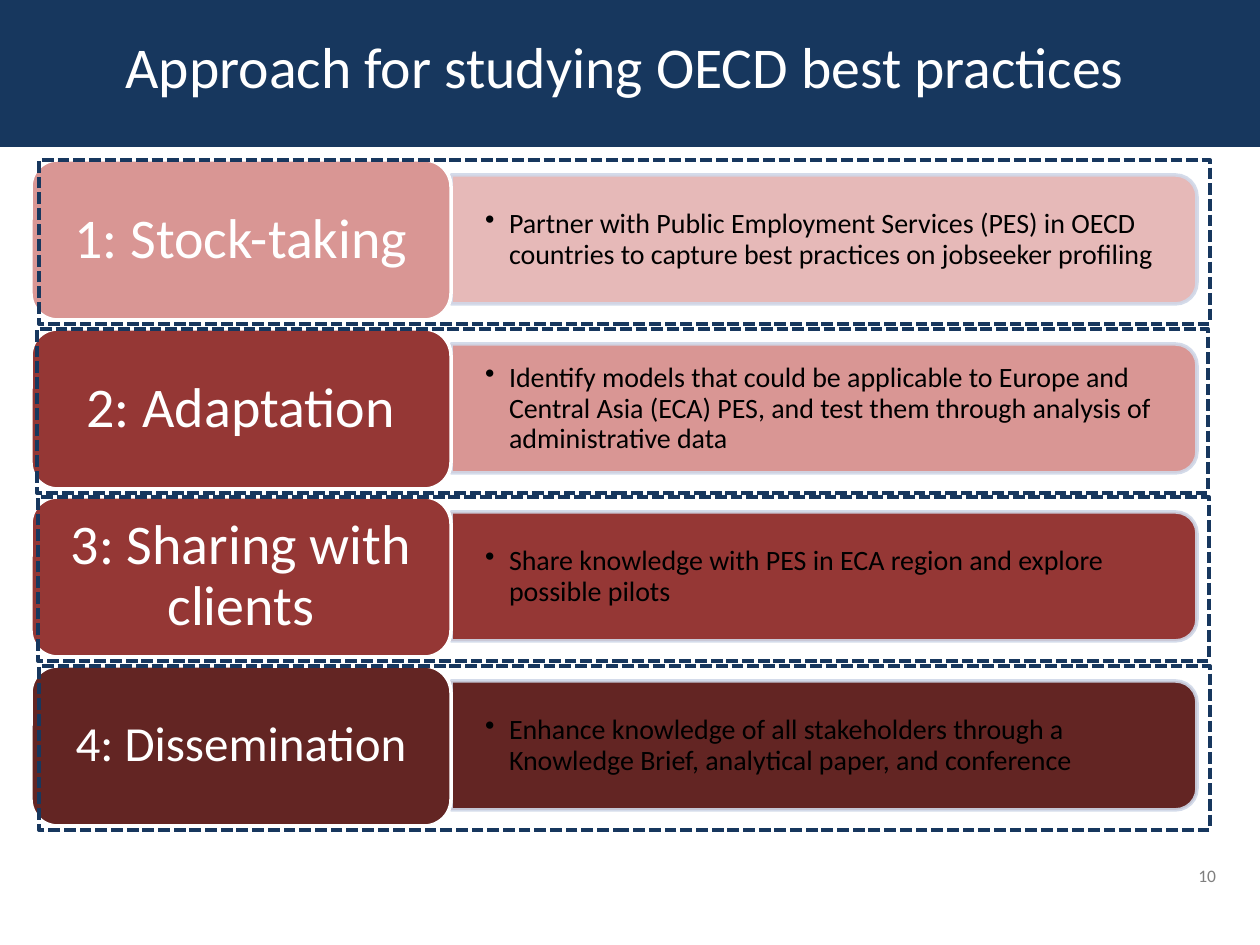
import pptx
import pptx.dml.color
import pptx.enum.dml
import pptx.enum.shapes
import pptx.enum.text
import pptx.oxml.ns
import pptx.util
from lxml import etree

PX_PER_INCH = 126
FONT = "Calibri"
RGB = pptx.dml.color.RGBColor
NAVY = RGB(0x17, 0x37, 0x5E)
WHITE = RGB(0xFF, 0xFF, 0xFF)
BLACK = RGB(0, 0, 0)
GREY = RGB(0x7F, 0x7F, 0x7F)
EDGE = RGB(0xD0, 0xD8, 0xE8)
PALE_ROSE = RGB(0xE6, 0xB9, 0xB8)
ROSE = RGB(0xD9, 0x96, 0x94)
RED = RGB(0x95, 0x37, 0x35)
MAROON = RGB(0x63, 0x25, 0x23)

SHAPE = pptx.enum.shapes.MSO_SHAPE
ALIGN = pptx.enum.text.PP_ALIGN
ANCHOR = pptx.enum.text.MSO_ANCHOR

# label, label size, label colour, bar text, bar colour, left of the dashed frame
STEPS = [
    ("1: Stock-taking", 32, ROSE,
     "Partner with Public Employment Services (PES) in OECD countries "
     "to capture best practices on jobseeker profiling", PALE_ROSE, 39),
    ("2: Adaptation", 32, RED,
     "Identify models that could be applicable to Europe and Central Asia (ECA) PES, "
     "and test them through analysis of administrative data", ROSE, 37),
    ("3: Sharing with clients", 32, RED,
     "Share knowledge with PES in ECA region and explore possible pilots", RED, 38),
    ("4: Dissemination", 28, MAROON,
     "Enhance knowledge of all stakeholders through a Knowledge Brief, "
     "analytical paper, and conference", MAROON, 39),
]


def px(length):
    return pptx.util.Emu(round(length * 914400 / PX_PER_INCH))


def add_block(page, kind, box, fill=None, line=None, width=2):
    block = page.shapes.add_shape(kind, *map(px, box))
    block.shadow.inherit = False
    if fill is None:
        block.fill.background()
    else:
        block.fill.solid()
        block.fill.fore_color.rgb = fill
    if line is None:
        block.line.fill.background()
    else:
        block.line.color.rgb = line
        block.line.width = pptx.util.Pt(width)
    return block


def write(para, text, size, color):
    span = para.add_run()
    span.text = text
    span.font.size = pptx.util.Pt(size)
    span.font.name = FONT
    span.font.color.rgb = color


def add_text_box(page, box, margins):
    """Add a wrapped, vertically centred text box and return its first paragraph."""
    frame = page.shapes.add_textbox(*map(px, box)).text_frame
    frame.word_wrap = True
    frame.vertical_anchor = ANCHOR.MIDDLE
    frame.margin_left = frame.margin_right = px(margins[0])
    frame.margin_top = frame.margin_bottom = px(margins[1])
    return frame.paragraphs[0]


def set_bullet(para, indent):
    properties = para._p.get_or_add_pPr()
    properties.set("marL", str(px(indent)))
    properties.set("indent", str(-px(indent)))
    etree.SubElement(properties, pptx.oxml.ns.qn("a:buChar"), char="•")


def set_line_alpha(block, percent):
    color = block.line.fill._xPr.find(".//" + pptx.oxml.ns.qn("a:srgbClr"))
    etree.SubElement(color, pptx.oxml.ns.qn("a:alpha"), val=str(percent * 1000))


def add_header(page, box):
    left, top, width, height = box
    title = page.shapes.title
    band = add_block(page, SHAPE.RECTANGLE, box, NAVY)
    title.element.addprevious(band.element)
    title.left, title.top = px(left + 38), px(top + 24)
    title.width, title.height = px(width - 86), px(height - 45)
    frame = title.text_frame
    frame.auto_size = pptx.enum.text.MSO_AUTO_SIZE.NONE
    frame.vertical_anchor = ANCHOR.TOP
    para = frame.paragraphs[0]
    para.alignment = ALIGN.CENTER
    write(para, "Approach for studying OECD best practices", 33, WHITE)


def add_bar(page, box, text, color):
    """Add a bar rounded on its right side, with one bulleted line of text."""
    left, top, width, height = box
    shift = (width - height) / 2
    upright = (left + shift, top - shift, height, width)
    bar = add_block(page, SHAPE.ROUND_2_SAME_RECTANGLE, upright, color, EDGE)
    bar.rotation = 90
    set_line_alpha(bar, 90)
    para = add_text_box(page, (left, top + 7, width - 6, height - 13), (34, 17))
    set_bullet(para, 24)
    para.line_spacing = 0.9
    write(para, text, 16, BLACK)


def add_label(page, box, text, size, color):
    left, top, width, height = box
    add_block(page, SHAPE.ROUNDED_RECTANGLE, box, color, WHITE)
    para = add_text_box(page, (left + 8, top + 8, width - 16, height - 16), (16, 8))
    para.alignment = ALIGN.CENTER
    para.line_spacing = 0.9
    write(para, text, size, WHITE)


def add_step(page, box, step):
    left, top, width, height = box
    label, size, label_color, text, bar_color, _ = step
    label_width = 420
    add_bar(page, (left + label_width, top + 15, width - label_width, 129), text, bar_color)
    add_label(page, (left, top, label_width, height), label, size, label_color)


def add_frame(page, box):
    frame = add_block(page, SHAPE.RECTANGLE, box, line=NAVY, width=2.25)
    frame.line.dash_style = pptx.enum.dml.MSO_LINE.SQUARE_DOT


def add_page_number(page, box):
    para = add_text_box(page, box, (13, 6))
    para.alignment = ALIGN.RIGHT
    write(para, "10", 10, GREY)


def main():
    deck = pptx.Presentation()
    deck.slide_width, deck.slide_height = px(1260), px(945)
    page = deck.slides.add_slide(deck.slide_layouts[5])
    add_header(page, (0, 0, 1260, 147))
    add_page_number(page, (1134, 851, 95, 50))
    tops = [160 + (337 * row + 1) // 2 for row in range(len(STEPS))]
    for top, step in zip(tops, STEPS):
        add_step(page, (31, top, 1166, 160), step)
    for top, step in zip(tops, STEPS):
        add_frame(page, (step[-1], top, 1171, 164))
    deck.save("out.pptx")


if __name__ == "__main__":
    main()
